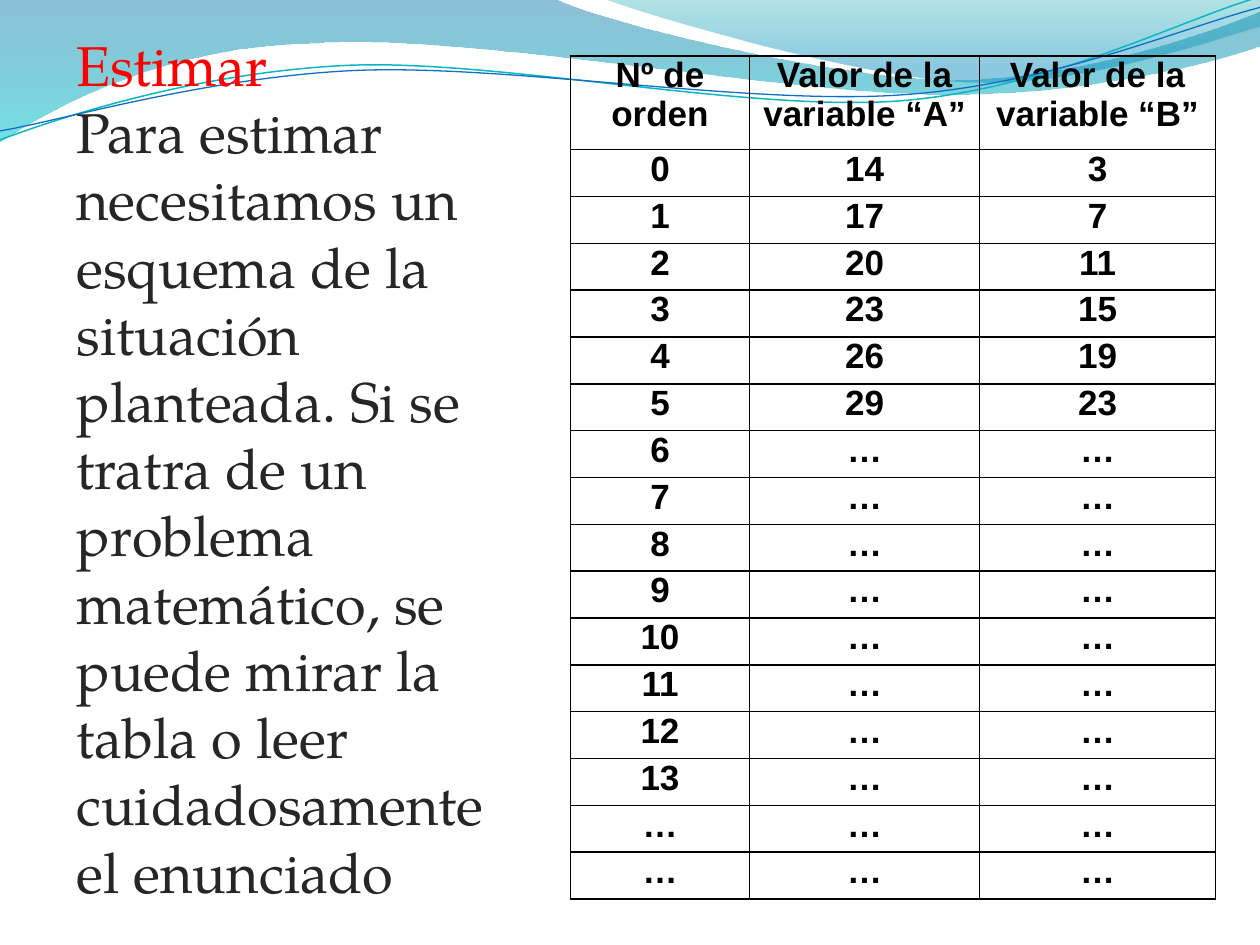
from lxml import etree
from pptx import Presentation
from pptx.dml.color import RGBColor
from pptx.enum.text import MSO_ANCHOR, MSO_AUTO_SIZE, PP_ALIGN
from pptx.oxml import parse_xml
from pptx.oxml.ns import nsdecls, qn
from pptx.util import Cm, Pt

COLORS = {
    "black": "000000", "body": "262626", "heading": "FF0000",
    "deep_blue": "0074A1", "cyan": "00C6CF", "teal": "00A1A9", "sky": "008BBF",
    "teal_line": "0AB8BF", "blue_line": "0F6FC6",
}
BODY_FONT, TABLE_FONT = "TeX Gyre Pagella", "Arial"
WAVE_ROTATION = 357.3

# Outlines in cm: a start, then segments of one point (line) or three (Bézier curve)
WIDE_BAND = ((0, 0), [
    [(11.18, -0.03)],
    [(12.09, 0.43), (16.87, 1.6), (19.25, 1.6)],
    [(21.67, 1.6), (24.33, 0.66), (25.4, 0.23)],
    [(25.43, 0.91)],
    [(24.97, 1.12), (22.1, 1.93), (18.95, 1.9)],
    [(15.8, 1.9), (9.7, 0.71), (6.53, 0.86)],
    [(3.28, 0.91), (1.17, 2.11), (-0.03, 2.87)],
])
RIGHT_BAND = ((12.17, -0.03), [
    [(12.93, 0.28), (17.32, 1.57), (19.53, 1.65)],
    [(21.74, 1.75), (24.41, 0.81), (25.4, 0.53)],
    [(25.4, 0)],
])
TEAL_WAVE = ((-0.05, 2.22), [
    [(1.19, 1.82), (4.02, 1.04), (7.05, 1.05)],
    [(10.05, 1.07), (15.02, 2.37), (18.08, 2.29)],
    [(21.13, 2.2), (23.87, 0.91), (25.41, 0.55)],
])
BLUE_WAVE = ((-0.04, 2.04), [
    [(1.16, 1.9), (4.18, 1.15), (7.2, 1.16)],
    [(10.25, 1.18), (15.13, 2.25), (18.18, 2.17)],
    [(21.21, 2.1), (23.93, 1.06), (25.45, 0.75)],
])


class SlideBuilder:
    def __init__(self, slide):
        self.slide = slide

    def color(self, name):
        return RGBColor.from_string(COLORS[name])

    def format_run(self, run, font, size, color, bold=False):
        run.font.name = font
        run.font.size = Pt(size)
        run.font.bold = bold
        run.font.color.rgb = self.color(color)

    def outline(self, path, close):
        (left, top), segments = path
        builder = self.slide.shapes.build_freeform(Cm(left), Cm(top))
        ends = [segment[-1] for segment in segments]
        builder.add_line_segments([(Cm(x), Cm(y)) for x, y in ends], close=close)
        shape = builder.convert_to_shape()
        shape.shadow.inherit = False
        # Bend the segments that have control points
        lines = list(shape.element.spPr.iter(qn("a:lnTo")))
        for line, segment in zip(lines, segments):
            if len(segment) == 3:
                curve = etree.Element(qn("a:cubicBezTo"))
                for x, y in segment:
                    etree.SubElement(curve, qn("a:pt"), x=str(Cm(x) - shape.left),
                                     y=str(Cm(y) - shape.top))
                line.getparent().replace(line, curve)
        return shape

    def band(self, path, stops):
        """Each stop is (position, colour, opacity in percent)."""
        shape = self.outline(path, True)
        shape.line.fill.background()
        shape.fill.gradient()
        shape.fill.gradient_angle = 270
        for stop, (position, color, _) in zip(shape.fill.gradient_stops, stops):
            stop.position = position
            stop.color.rgb = self.color(color)
        elements = shape.element.spPr.iter(qn("a:srgbClr"))
        for element, (_, _, opacity) in zip(elements, stops):
            etree.SubElement(element, qn("a:alpha"), val=str(opacity * 1000))

    def wave(self, path, color, width):
        shape = self.outline(path, False)
        shape.rotation = WAVE_ROTATION
        shape.fill.background()
        shape.line.color.rgb = self.color(color)
        shape.line.width = Pt(width)

    def text(self, left, top, width, height, paragraphs):
        box = self.slide.shapes.add_textbox(Cm(left), Cm(top), Cm(width), Cm(height))
        frame = box.text_frame
        frame.word_wrap = True
        frame.auto_size = MSO_AUTO_SIZE.SHAPE_TO_FIT_TEXT
        frame.text = "\n".join(text for text, _ in paragraphs)
        for paragraph, (_, color) in zip(frame.paragraphs, paragraphs):
            self.format_run(paragraph.runs[0], BODY_FONT, 32, color)

    def cell(self, cell, text):
        cell.fill.background()
        cell.margin_left = cell.margin_right = Cm(0.18)
        cell.margin_top = cell.margin_bottom = 0
        cell.vertical_anchor = MSO_ANCHOR.TOP
        paragraph = cell.text_frame.paragraphs[0]
        paragraph.text = text
        paragraph.alignment = PP_ALIGN.CENTER
        self.format_run(paragraph.runs[0], TABLE_FONT, 20, "black", bold=True)
        properties = cell._tc.get_or_add_tcPr()
        for index, side in enumerate(("lnL", "lnR", "lnT", "lnB")):
            properties.insert(index, parse_xml(
                f'<a:{side} {nsdecls("a")} w="{Pt(1)}"><a:solidFill>'
                f'<a:srgbClr val="{COLORS["black"]}"/></a:solidFill></a:{side}>'))

    def table(self, left, top, height, widths, rows):
        frame = self.slide.shapes.add_table(
            len(rows), len(widths), Cm(left), Cm(top), Cm(sum(widths)), Cm(height))
        table = frame.table
        table.first_row = table.horz_banding = False
        for column, width in zip(table.columns, widths):
            column.width = Cm(width)
        # The header is twice as high as the other rows
        unit = height / (len(rows) + 1)
        for index, values in enumerate(rows):
            table.rows[index].height = Cm(unit * (2 if index == 0 else 1))
            for column, value in enumerate(values):
                self.cell(table.cell(index, column), value)


def main():
    presentation = Presentation()
    presentation.slide_width, presentation.slide_height = Cm(25.4), Cm(19.05)
    builder = SlideBuilder(presentation.slides.add_slide(presentation.slide_layouts[6]))

    # Waves along the top
    builder.band(WIDE_BAND, [(0, "deep_blue", 45), (1, "cyan", 55)])
    builder.band(RIGHT_BAND, [(0, "teal", 30), (0.8, "sky", 45)])
    builder.wave(TEAL_WAVE, "teal_line", 0.85)
    builder.wave(BLUE_WAVE, "blue_line", 0.75)

    # Table of both variables
    known_a = ["14", "17", "20", "23", "26", "29"]
    known_b = ["3", "7", "11", "15", "19", "23"]
    orders = [str(number) for number in range(14)] + ["…"] * 2
    unknown = ["…"] * (len(orders) - len(known_a))
    header = ("Nº de orden", "Valor de la variable “A”", "Valor de la variable “B”")
    rows = [header, *zip(orders, known_a + unknown, known_b + unknown)]
    builder.table(11.5, 1.13, 17, (3.61, 4.64, 4.75), rows)

    # Heading and explanation
    builder.text(1.29, 0.49, 9.4, 18.03, [
        ("Estimar", "heading"),
        ("Para estimar necesitamos un esquema de la situación planteada. Si se tratra "
         "de un problema matemático, se puede mirar la tabla o leer cuidadosamente "
         "el enunciado", "body"),
    ])
    presentation.save("out.pptx")


if __name__ == "__main__":
    main()
